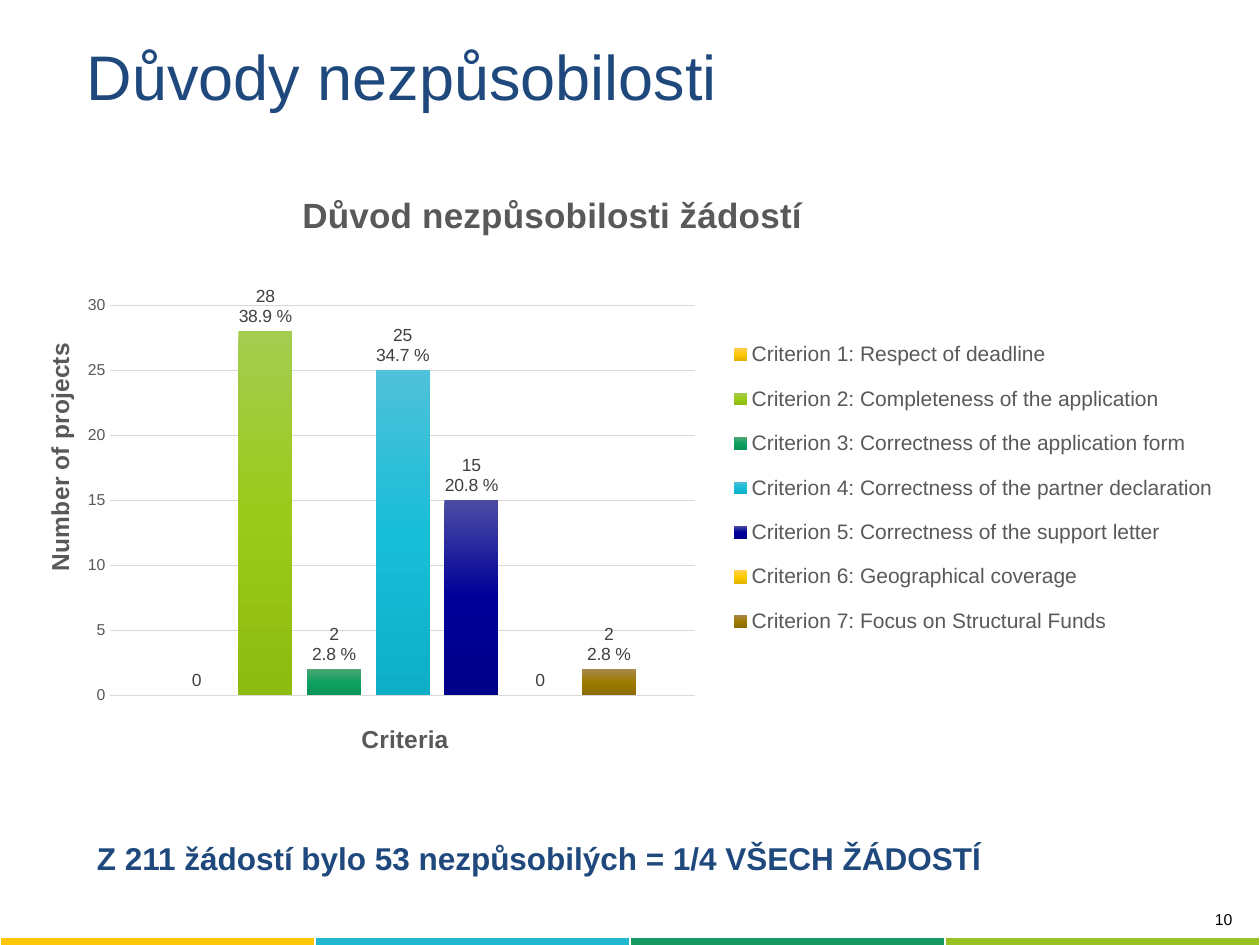
from lxml import etree
from pptx import Presentation, util as u
from pptx.chart.data import CategoryChartData
from pptx.dml.color import RGBColor
from pptx.enum import chart as ch, text
from pptx.oxml import parse_xml
from pptx.oxml.ns import nsdecls, qn

NAVY, GREY, DARK = "1F497D", "595959", "404040"
STRIPE = ["FDC609", "21B7CF", "159960", "98C222"]
# Name, count, share label, gradient from top to bottom
CRITERIA = [
    ("Criterion 1: Respect of deadline", 0, None, ("FFCC4C", "FFC707", "E5B204")),
    ("Criterion 2: Completeness of the application", 28, "38.9 %", ("A4CC4F", "9CCA1A", "8EBB10")),
    ("Criterion 3: Correctness of the application form", 2, "2.8 %", ("4CA674", "0EA061", "079457")),
    ("Criterion 4: Correctness of the partner declaration", 25, "34.7 %", ("4FC1D9", "18BDD8", "0EAEC7")),
    ("Criterion 5: Correctness of the support letter", 15, "20.8 %", ("4B4BA4", "000099", "000088")),
    ("Criterion 6: Geographical coverage", 0, None, ("FFD04B", "FFCC00", "E3B500")),
    ("Criterion 7: Focus on Structural Funds", 2, "2.8 %", ("A8894B", "9D7A00", "8C6C00")),
]


def rgb(value):
    return RGBColor.from_string(value)


def set_layout(parent, after=None, inner=False, **place):
    """Place a chart part by fractions of the chart area."""
    for old in parent.findall(qn("c:layout")):
        parent.remove(old)
    layout = parse_xml(f"<c:layout {nsdecls('c')}><c:manualLayout/></c:layout>")
    values = {"layoutTarget": "inner"} if inner else {}
    values.update(xMode="edge", yMode="edge", **place)
    for name, value in values.items():
        etree.SubElement(layout[0], qn("c:" + name)).set("val", str(value))
    parent.insert(parent.index(parent.find(qn(after))) + 1 if after else 0, layout)


class Deck:
    font = "Arial"

    def __init__(self, width, height):
        self.prs = Presentation()
        self.prs.slide_width, self.prs.slide_height = u.Inches(width), u.Inches(height)
        self.s = self.prs.slides.add_slide(self.prs.slide_layouts[6])

    def style(self, font, size, color, bold=False):
        values = {"name": self.font, "size": u.Pt(size), "bold": bold}
        for name, value in values.items():
            setattr(font, name, value)
        font.color.rgb = rgb(color)

    def text(self, box, words, size, color, bold=False, **paragraph):
        tf = self.s.shapes.add_textbox(*map(u.Inches, box)).text_frame
        tf.word_wrap = True
        tf.vertical_anchor = text.MSO_ANCHOR.MIDDLE
        p = tf.paragraphs[0]
        for name, value in paragraph.items():
            setattr(p, name, value)
        r = p.add_run()
        r.text = words
        self.style(r.font, size, color, bold)

    def stripe(self, box, colors):
        table = self.s.shapes.add_table(1, len(colors), *map(u.Inches, box)).table
        table.first_row = table.horz_banding = False
        for cell, color in zip(table.rows[0].cells, colors):
            cell.fill.solid()
            cell.fill.fore_color.rgb = rgb(color)

    def chart_title(self, owner, element_of, words, size, x, y, rotation=None):
        tf = element_of.text_frame
        p = tf.paragraphs[0]
        r = p.add_run()
        r.text = words
        self.style(r.font, size, GREY, True)
        if rotation is not None:
            body = tf._txBody.find(qn("a:bodyPr"))
            body.set("rot", str(rotation * 60000))
            body.set("vert", "horz")
        set_layout(element_of._element, "c:tx", x=x, y=y)

    def gradient(self, series, colors):
        stops = "".join(f'<a:gs pos="{i * 50000}"><a:srgbClr val="{c}"/></a:gs>'
                        for i, c in enumerate(colors))
        series._element.get_or_add_spPr().insert(0, parse_xml(
            f"<a:gradFill {nsdecls('a')} rotWithShape=\"1\"><a:gsLst>{stops}</a:gsLst>"
            '<a:lin ang="5400000" scaled="0"/></a:gradFill>'))

    def series(self, series, count, share, colors):
        self.gradient(series, colors)
        series.invert_if_negative = False
        labels = series.data_labels
        labels.show_value = True
        labels.position = ch.XL_LABEL_POSITION.OUTSIDE_END
        self.style(labels.font, 10, DARK)
        if share:
            label = series.points[0].data_label
            label.text_frame.text = f"{count}\n{share}"
            label.position = ch.XL_LABEL_POSITION.OUTSIDE_END
            for p in label.text_frame.paragraphs:
                self.style(p.runs[0].font, 10, DARK)

    def column_chart(self, box, rows):
        data = CategoryChartData()
        data.categories = ["1"]
        for name, count, *_ in rows:
            data.add_series(name, [count])
        chart = self.s.shapes.add_chart(
            ch.XL_CHART_TYPE.COLUMN_CLUSTERED, *map(u.Inches, box), data).chart
        self.style(chart.font, 10, "000000")
        plot = chart.plots[0]
        plot.gap_width, plot.overlap, plot.vary_by_categories = 219, -27, False
        for series, (_, *values) in zip(plot.series, rows):
            self.series(series, *values)
        set_layout(chart._chartSpace.chart.plotArea, inner=True,
                   x=0.078, y=0.223, w=0.479, h=0.667)

        # Axes
        cat, val = chart.category_axis, chart.value_axis
        cat.visible = False
        val.minimum_scale, val.maximum_scale, val.major_unit = 0, 30, 5
        val.major_tick_mark = ch.XL_TICK_MARK.NONE
        val.format.line.fill.background()
        self.style(val.tick_labels.font, 9, GREY)
        grid = val.major_gridlines.format.line
        grid.width = u.Pt(0.75)
        grid.color.rgb = rgb("D9D9D9")

        # Titles
        self.chart_title(chart, chart.chart_title, "Důvod nezpůsobilosti žádostí", 20, 0.23, 0.02)
        self.chart_title(cat, cat.axis_title, "Criteria", 14, 0.28, 0.93)
        self.chart_title(val, val.axis_title, "Number of projects", 14, 0.02, 0.28, -90)

        # Legend
        chart.has_legend = True
        legend = chart.legend
        legend.position = ch.XL_LEGEND_POSITION.BOTTOM
        legend.include_in_layout = False
        self.style(legend.font, 12, GREY)
        set_layout(legend._element, "c:legendPos", x=0.58, y=0.25, w=0.41, h=0.57)


def main():
    deck = Deck(10, 7.5)
    # Footer stripe and page number
    deck.stripe((0, 7.44, 10, 0.17), STRIPE)
    deck.text((7.91, 7.14, 1.97, 0.31), "10", 9, "000000", alignment=text.PP_ALIGN.RIGHT)
    # Heading, chart and conclusion
    deck.text((0.59, 0.29, 9, 0.61), "Důvody nezpůsobilosti", 36, NAVY)
    deck.column_chart((0.12, 1.39, 9.69, 4.65), CRITERIA)
    deck.text((0.67, 6.61, 8.35, 0.4),
              "Z 211 žádostí bylo 53 nezpůsobilých = 1/4 VŠECH ŽÁDOSTÍ", 18, NAVY, True)
    deck.prs.save("out.pptx")


if __name__ == "__main__":
    main()
